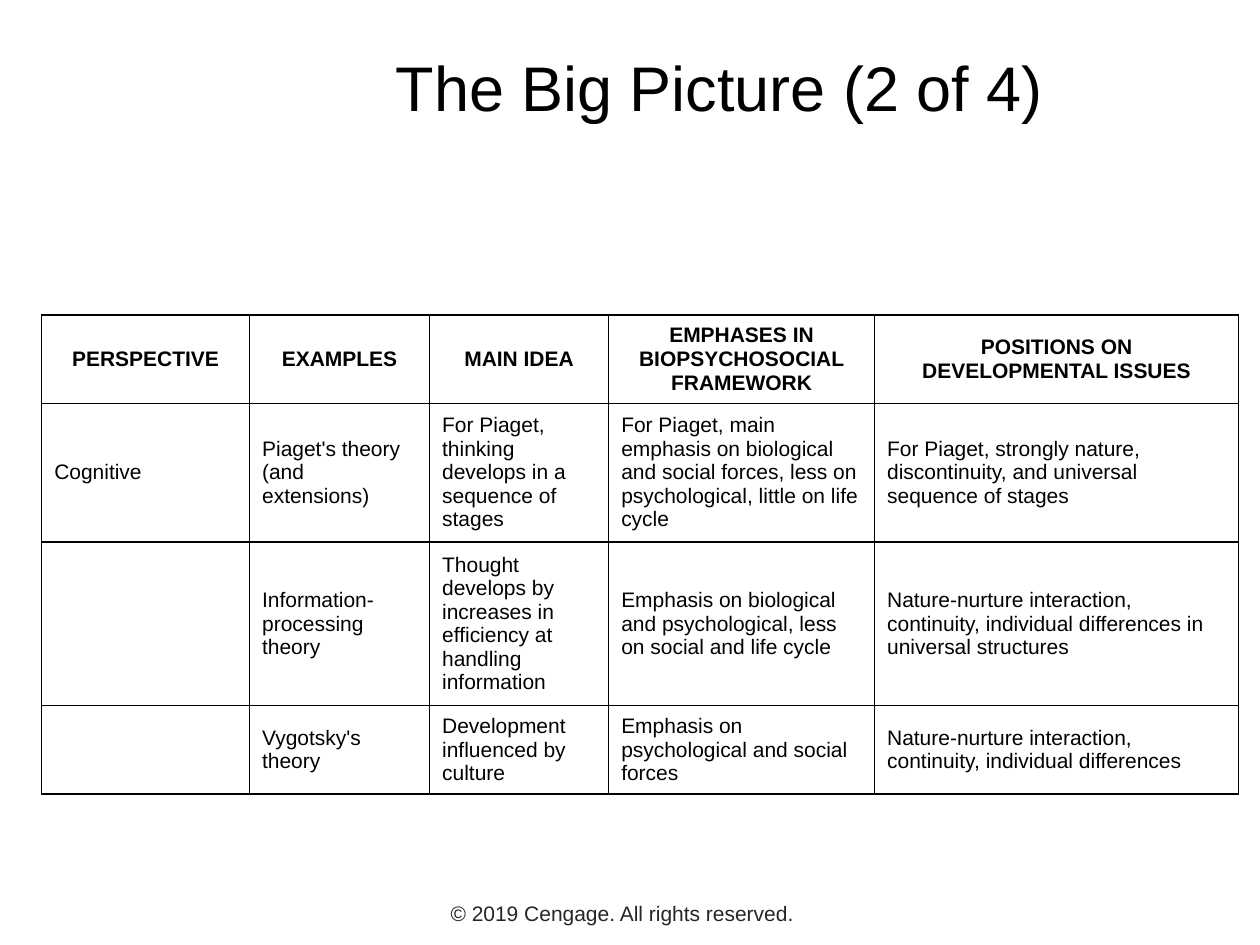
from dataclasses import dataclass

from lxml import etree
from pptx import Presentation
from pptx.dml.color import RGBColor
from pptx.enum.text import MSO_ANCHOR, PP_ALIGN
from pptx.oxml.ns import qn
from pptx.util import Cm, Pt

CENTER = PP_ALIGN.CENTER
LEFT = PP_ALIGN.LEFT
MIDDLE = MSO_ANCHOR.MIDDLE
TOP = MSO_ANCHOR.TOP


@dataclass(frozen=True)
class Theme:
    """Colours, font, type sizes and line width of the slide."""
    font: str = "Arial"
    ink: str = "000000"
    footer_ink: str = "262626"
    title_size: int = 36
    body_size: int = 12
    border_width: int = 1


THEME = Theme()

COLUMN_WIDTHS = (4.19, 3.63, 3.61, 5.36, 7.34)
ROW_HEIGHTS = (1.7, 2.62, 3.1, 1.68)
PERSPECTIVES = (
    ("PERSPECTIVE", "EXAMPLES", "MAIN IDEA",
     "EMPHASES IN BIOPSYCHOSOCIAL FRAMEWORK",
     "POSITIONS ON DEVELOPMENTAL ISSUES"),
    ("Cognitive", "Piaget's theory (and extensions)",
     "For Piaget, thinking develops in a sequence of stages",
     "For Piaget, main emphasis on biological and social forces, "
     "less on psychological, little on life cycle",
     "For Piaget, strongly nature, discontinuity, and universal "
     "sequence of stages"),
    ("", "Information-processing theory",
     "Thought develops by increases in efficiency at handling information",
     "Emphasis on biological and psychological, less on social and life cycle",
     "Nature-nurture interaction, continuity, individual differences "
     "in universal structures"),
    ("", "Vygotsky's theory", "Development influenced by culture",
     "Emphasis on psychological and social forces",
     "Nature-nurture interaction, continuity, individual differences"),
)


def style_paragraph(paragraph, size, color, align, bold=False):
    """Align a paragraph and format its font."""
    paragraph.alignment = align
    paragraph.font.size = Pt(size)
    for span in paragraph.runs:
        span.font.name = THEME.font
        span.font.size = Pt(size)
        span.font.bold = bold
        span.font.color.rgb = RGBColor.from_string(color)


def add_centered_text(page, text, bounds, size, color, anchor):
    """Add a text box with one centred paragraph."""
    box = page.shapes.add_textbox(*map(Cm, bounds))
    frame = box.text_frame
    frame.word_wrap = True
    frame.vertical_anchor = anchor
    frame.text = text
    style_paragraph(frame.paragraphs[0], size, color, CENTER)


def set_borders(cell):
    """Draw a solid line on all four sides of a cell."""
    properties = cell._tc.get_or_add_tcPr()
    for side in ("a:lnL", "a:lnR", "a:lnT", "a:lnB"):
        line = etree.SubElement(properties, qn(side), w=str(Pt(THEME.border_width)))
        fill = etree.SubElement(line, qn("a:solidFill"))
        etree.SubElement(fill, qn("a:srgbClr"), val=THEME.ink)


def fill_cell(cell, text, is_header):
    """Write and format one table cell."""
    cell.text_frame.text = text
    cell.vertical_anchor = MIDDLE
    style_paragraph(cell.text_frame.paragraphs[0], THEME.body_size, THEME.ink,
                    CENTER if is_header else LEFT, is_header)
    set_borders(cell)
    cell.fill.background()


def add_perspective_table(page, left, top):
    """Add the bordered table of perspectives."""
    frame = page.shapes.add_table(
        len(ROW_HEIGHTS), len(COLUMN_WIDTHS), Cm(left), Cm(top),
        Cm(sum(COLUMN_WIDTHS)), Cm(sum(ROW_HEIGHTS)))
    table = frame.table
    table.first_row = False
    table.horz_banding = False
    for column, width in zip(table.columns, COLUMN_WIDTHS):
        column.width = Cm(width)
    for index, (row, height) in enumerate(zip(table.rows, ROW_HEIGHTS)):
        row.height = Cm(height)
        for cell, text in zip(row.cells, PERSPECTIVES[index]):
            fill_cell(cell, text, index == 0)


def main():
    """Build and save the slide."""
    deck = Presentation()
    deck.slide_width, deck.slide_height = Cm(25.4), Cm(19.05)
    page = deck.slides.add_slide(deck.slide_layouts[6])
    add_centered_text(page, "© 2019 Cengage. All rights reserved.",
                      (3.53, 18.03, 18.03, 0.76),
                      THEME.body_size, THEME.footer_ink, TOP)
    add_centered_text(page, "The Big Picture (2 of 4)",
                      (4.88, 0.64, 19.25, 2.21),
                      THEME.title_size, THEME.ink, MIDDLE)
    add_perspective_table(page, 0.84, 6.35)
    deck.save("out.pptx")


if __name__ == "__main__":
    main()
